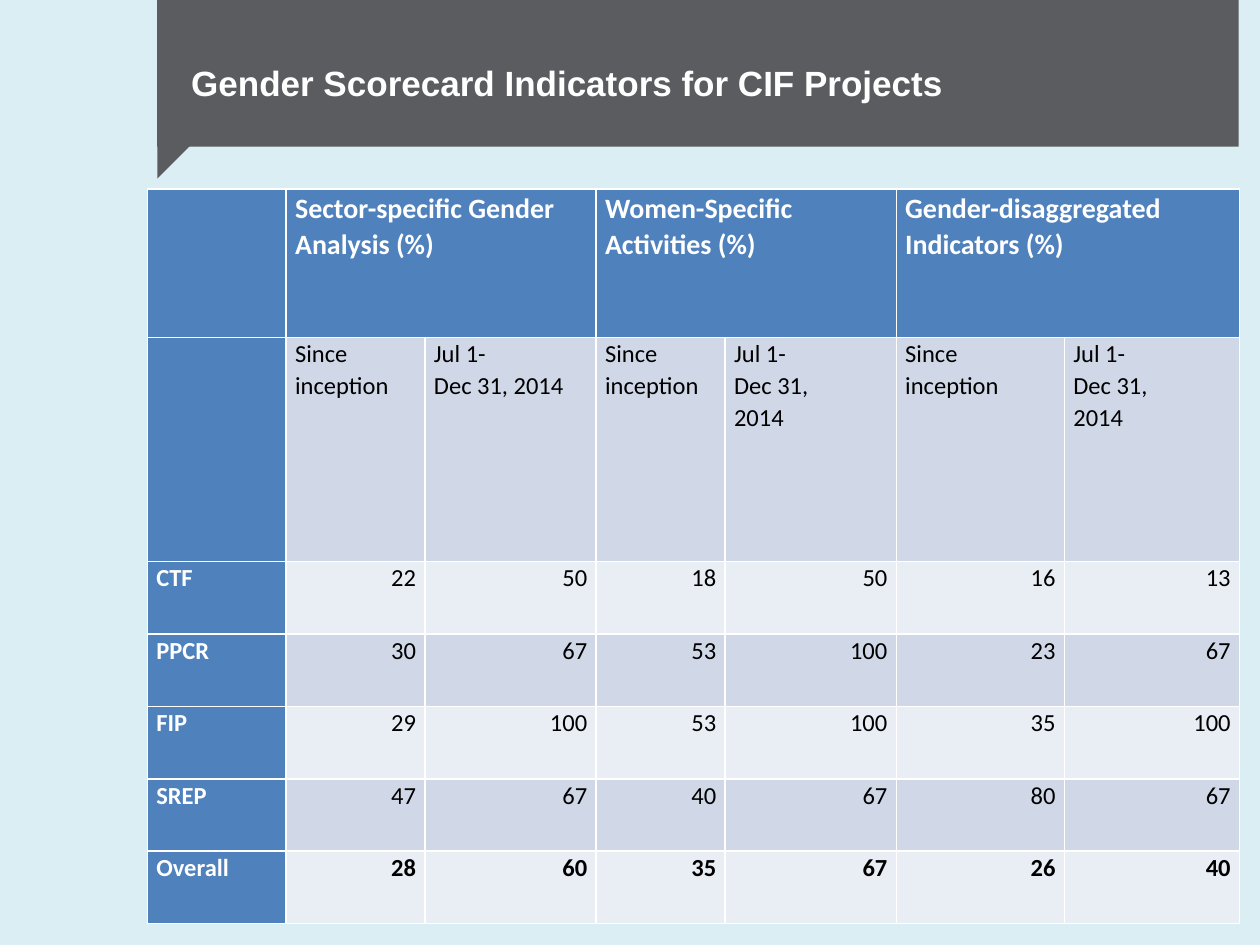
from pptx import Presentation
from pptx.dml.color import RGBColor
from pptx.enum.shapes import MSO_SHAPE
from pptx.enum.text import MSO_ANCHOR, PP_ALIGN
from pptx.util import Cm, Pt

HEADINGS = ["", "Sector-specific Gender Analysis (%)", "", "Women-Specific Activities (%)", "",
            "Gender-disaggregated Indicators (%)", ""]
PERIODS = ["", "Since inception", "Jul 1-\nDec 31, 2014", "Since inception", "Jul 1-\nDec 31,\n2014",
           "Since inception", "Jul 1-\nDec 31,\n2014"]
SCORES = [
    ["CTF", 22, 50, 18, 50, 16, 13],
    ["PPCR", 30, 67, 53, 100, 23, 67],
    ["FIP", 29, 100, 53, 100, 35, 100],
    ["SREP", 47, 67, 40, 67, 80, 67],
    ["Overall", 28, 60, 35, 67, 26, 40],
]
COLUMN_WIDTHS = [2.8, 2.8, 3.45, 2.6, 3.45, 3.39, 3.53]
ROW_HEIGHTS = [2.99, 4.52] + [1.46] * len(SCORES)


def color(hex_string):
    """Return the colour for a hex string."""
    return RGBColor.from_string(hex_string)


class ScorecardSlide:
    """Hold the style and the current slide."""

    white, black = "FFFFFF", "000000"
    background, banner = "DBEEF4", "5A5C60"
    header, bands = "4F81BD", ("E9EDF4", "D0D8E8")

    def __init__(self, presentation):
        """Add a title-only slide with a plain background."""
        self.slide = presentation.slides.add_slide(presentation.slide_layouts[5])
        fill = self.slide.background.fill
        fill.solid()
        fill.fore_color.rgb = color(self.background)

    def format_font(self, paragraph, name, size, text_color, bold):
        """Set the font of a paragraph."""
        font = paragraph.font
        font.name, font.size, font.bold = name, Pt(size), bold
        font.color.rgb = color(text_color)

    def add_title(self, text, left, top, width, height):
        """Place and format the title placeholder."""
        title = self.slide.shapes.title
        title.left, title.top, title.width, title.height = Cm(left), Cm(top), Cm(width), Cm(height)
        frame = title.text_frame
        frame.text = text
        frame.word_wrap = True
        frame.vertical_anchor = MSO_ANCHOR.MIDDLE
        paragraph = frame.paragraphs[0]
        paragraph.alignment = PP_ALIGN.LEFT
        self.format_font(paragraph, "Arial", 20, self.white, True)

    def add_banner_shape(self, kind, left, top, width, height, rotation=0):
        """Add a plain banner shape behind the title."""
        shape = self.slide.shapes.add_shape(kind, Cm(left), Cm(top), Cm(width), Cm(height))
        shape.rotation = rotation
        shape.shadow.inherit = False
        shape.fill.solid()
        shape.fill.fore_color.rgb = color(self.banner)
        shape.line.fill.background()
        self.slide.shapes.title.element.addprevious(shape.element)

    def format_cell(self, cell, value, row, column):
        """Fill a table cell and format its text by its place."""
        is_header = row == 0 or column == 0
        is_number = isinstance(value, int)
        cell.fill.solid()
        cell.fill.fore_color.rgb = color(self.header if is_header else self.bands[row % 2])
        cell.margin_left = cell.margin_right = Cm(0.18)
        cell.margin_top = cell.margin_bottom = 0
        cell.text = str(value)
        for paragraph in cell.text_frame.paragraphs:
            paragraph.alignment = PP_ALIGN.RIGHT if is_number else PP_ALIGN.LEFT
            paragraph.line_spacing = 1.07
            self.format_font(paragraph, "Calibri", 16 if row == 0 else 14,
                             self.white if is_header else self.black,
                             is_header or row == len(ROW_HEIGHTS) - 1)

    def add_table(self, rows, left, top):
        """Add the scorecard table with paired headings."""
        table = self.slide.shapes.add_table(
            len(rows), len(COLUMN_WIDTHS), Cm(left), Cm(top),
            Cm(sum(COLUMN_WIDTHS)), Cm(sum(ROW_HEIGHTS))).table
        table.first_col = True
        for column, width in zip(table.columns, COLUMN_WIDTHS):
            column.width = Cm(width)
        for row, height in zip(table.rows, ROW_HEIGHTS):
            row.height = Cm(height)
        for row, values in enumerate(rows):
            for column, value in enumerate(values):
                self.format_cell(table.cell(row, column), value, row, column)
        for column in range(1, len(COLUMN_WIDTHS), 2):
            table.cell(0, column).merge(table.cell(0, column + 1))


def main():
    """Build and save the presentation."""
    presentation = Presentation()
    presentation.slide_width, presentation.slide_height = Cm(25.4), Cm(19.05)
    scorecard = ScorecardSlide(presentation)
    scorecard.add_banner_shape(MSO_SHAPE.RECTANGLE, 3.17, 0, 21.8, 2.96)
    scorecard.add_banner_shape(MSO_SHAPE.RIGHT_TRIANGLE, 3.17, 2.75, 0.85, 0.85, rotation=90)
    scorecard.add_title("Gender Scorecard Indicators for CIF Projects", 3.6, 0.77, 20.53, 1.78)
    scorecard.add_table([HEADINGS, PERIODS, *SCORES], 2.97, 3.81)
    presentation.save("out.pptx")


if __name__ == "__main__":
    main()
